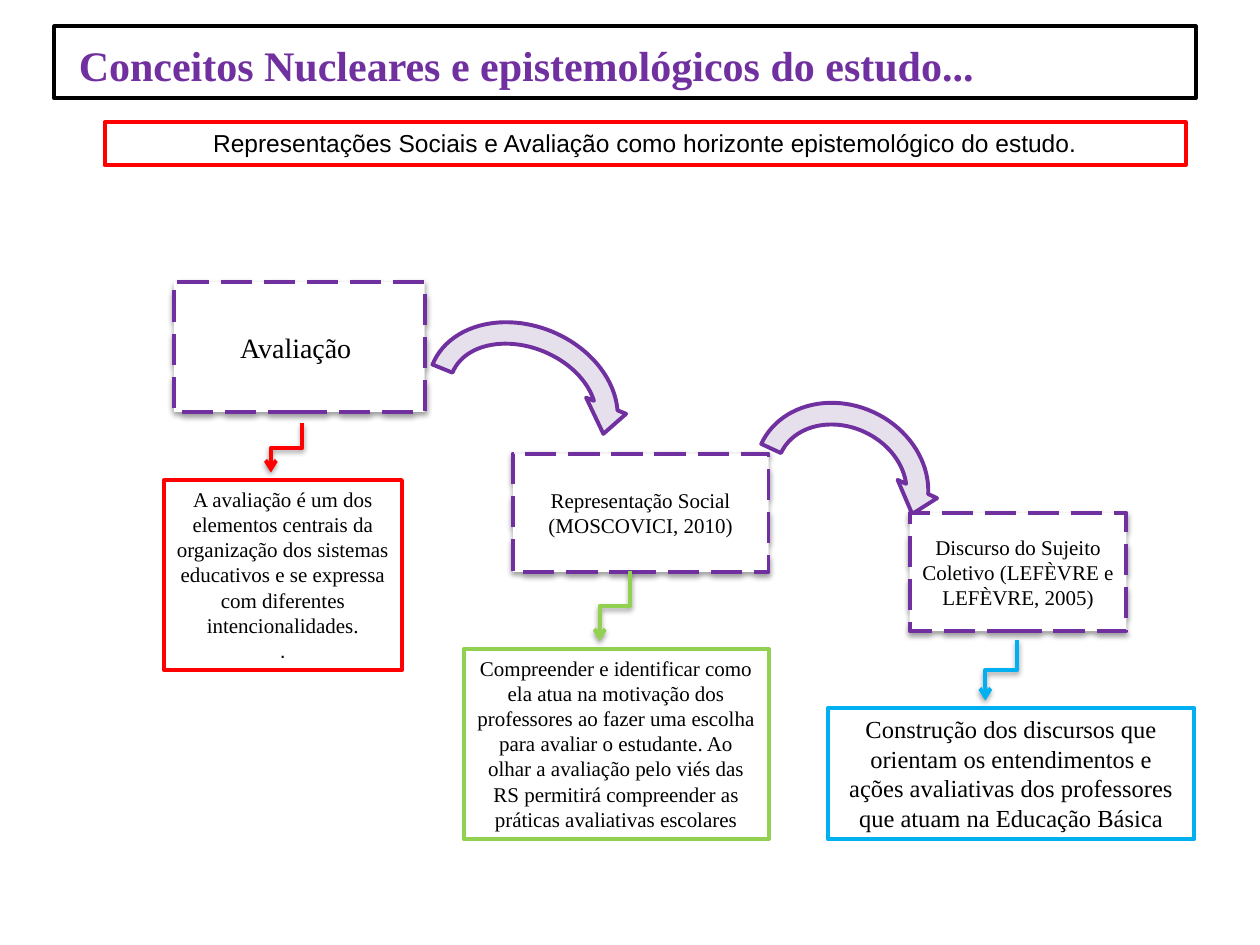
"""Build the slide on the core concepts of the study as three descending steps."""
from lxml import etree
from pptx import Presentation
from pptx.dml.color import RGBColor
from pptx.enum.dml import MSO_LINE
from pptx.enum.shapes import MSO_CONNECTOR, MSO_SHAPE
from pptx.enum.text import MSO_ANCHOR, PP_ALIGN
from pptx.oxml.ns import qn
from pptx.util import Inches, Pt

RECTANGLE, CURVED_ARROW = MSO_SHAPE.RECTANGLE, MSO_SHAPE.CIRCULAR_ARROW
ELBOW, LONG_DASH = MSO_CONNECTOR.ELBOW, MSO_LINE.LONG_DASH
TOP, MIDDLE = MSO_ANCHOR.TOP, MSO_ANCHOR.MIDDLE
LEFT, CENTER = PP_ALIGN.LEFT, PP_ALIGN.CENTER
SERIF, SANS = "Times New Roman", "Arial"
COLORS = {"purple": "7030A0", "lilac": "E6E0EC", "red": "FF0000", "green": "92D050",
          "blue": "00B0F0", "black": "000000", "white": "FFFFFF"}

SUBTITLE = "Representações Sociais e Avaliação como horizonte epistemológico do estudo."
TITLE_RUNS = [(" ", 28, SERIF), ("Conceitos Nucleares e epistemológicos do estudo...", 24, SERIF)]
STEPS = [
    {"concept": "Avaliação ", "size": 16, "concept_area": (138, 224, 199, 103),
     "meaning": [("A avaliação é um dos elementos centrais da organização dos sistemas educativos "
                  "e se expressa com diferentes intencionalidades.", 12, SERIF),
                 (".", 12, SANS)],
     "meaning_area": (130, 381, 189, 151), "color": "red", "link": (240, 336, 215, 375)},
    {"concept": "Representação Social (MOSCOVICI, 2010)", "size": 12,
     "concept_area": (407, 360, 203, 94),
     "meaning": [("Compreender e identificar como ela atua na motivação dos professores ao fazer "
                  "uma escolha para avaliar o estudante. Ao olhar a avaliação pelo viés das RS "
                  "permitirá compreender as práticas avaliativas escolares", 12, SERIF)],
     "meaning_area": (368, 515, 242, 151), "color": "green", "link": (500, 453, 476, 509)},
    {"concept": "Discurso do Sujeito Coletivo (LEFÈVRE e LEFÈVRE, 2005)", "size": 12,
     "concept_area": (722, 407, 172, 94),
     "meaning": [("Construção dos discursos que orientam os entendimentos e ações avaliativas "
                  "dos professores que atuam na Educação Básica", 14, SERIF)],
     "meaning_area": (657, 562, 291, 104), "color": "blue", "link": (807, 508, 782, 556)},
]
TRANSITIONS = [((329, 250, 172, 137), 22.1), ((589, 313, 158, 138), 24.9)]

COLUMNS, ROWS = 1000, 750
deck = Presentation()
deck.slide_width, deck.slide_height = Inches(10), Inches(7.5)
slide = deck.slides.add_slide(deck.slide_layouts[6])
cell_w, cell_h = deck.slide_width / COLUMNS, deck.slide_height / ROWS


def place(area):
    return [round(v * unit) for v, unit in zip(area, (cell_w, cell_h) * 2)]


def rgb(name):
    return RGBColor.from_string(COLORS[name])


def set_line(part, color):
    part.line.color.rgb = rgb(color)
    part.line.width = Pt(2.25)


def add_shadow(part):
    properties = part._element.spPr
    effects = properties.find(qn("a:effectLst"))
    if effects is None:
        effects = etree.SubElement(properties, qn("a:effectLst"))
    shadow = etree.SubElement(effects, qn("a:outerShdw"), blurRad="40000", dist="20000",
                              dir="5400000", rotWithShape="0")
    tint = etree.SubElement(shadow, qn("a:srgbClr"), val=COLORS["black"])
    etree.SubElement(tint, qn("a:alpha"), val="38000")


def add_outlined(kind, area, color, fill=None):
    part = slide.shapes.add_shape(kind, *place(area))
    part.shadow.inherit = False
    if fill:
        part.fill.solid()
        part.fill.fore_color.rgb = rgb(fill)
    else:
        part.fill.background()
    set_line(part, color)
    return part


def add_box(area, color, paragraphs, fill="white", anchor=TOP, align=CENTER, ink="black"):
    box = add_outlined(RECTANGLE, area, color, fill)
    frame = box.text_frame
    frame.word_wrap = True
    frame.vertical_anchor = anchor
    for index, runs in enumerate(paragraphs):
        paragraph = frame.add_paragraph() if index else frame.paragraphs[0]
        paragraph.alignment = align
        for text, size, family in runs:
            run = paragraph.add_run()
            run.text = text
            run.font.size, run.font.name = Pt(size), family
            run.font.color.rgb = rgb(ink)
    return box


def add_link(start_x, start_y, end_x, end_y, color):
    length, width = end_y - start_y, start_x - end_x
    left, top = (start_x + end_x - length) / 2, (start_y + end_y - width) / 2
    link = slide.shapes.add_connector(ELBOW, *place((left, top, left + length, top + width)))
    link._element.spPr.find(qn("a:xfrm")).set("rot", "5400000")
    set_line(link, color)
    etree.SubElement(link.line._get_or_add_ln(), qn("a:tailEnd"), type="arrow")
    add_shadow(link)


add_box((83, 97, 858, 34), "red", [[(SUBTITLE, 14, SANS)]], fill=None)
title = add_box((43, 21, 906, 57), "black", [TITLE_RUNS], None, TOP, LEFT, "purple")
for run in title.text_frame.paragraphs[0].runs:
    run.font.bold = True

for area, angle in TRANSITIONS:
    add_outlined(CURVED_ARROW, area, "purple", "lilac").rotation = angle

for step in STEPS:
    concept = add_box(step["concept_area"], "purple",
                      [[(step["concept"], step["size"], SERIF)]], anchor=MIDDLE)
    concept.line.dash_style = LONG_DASH
    add_shadow(concept)
    add_box(step["meaning_area"], step["color"], [[line] for line in step["meaning"]])
    add_link(*step["link"], step["color"])

deck.save("out.pptx")
